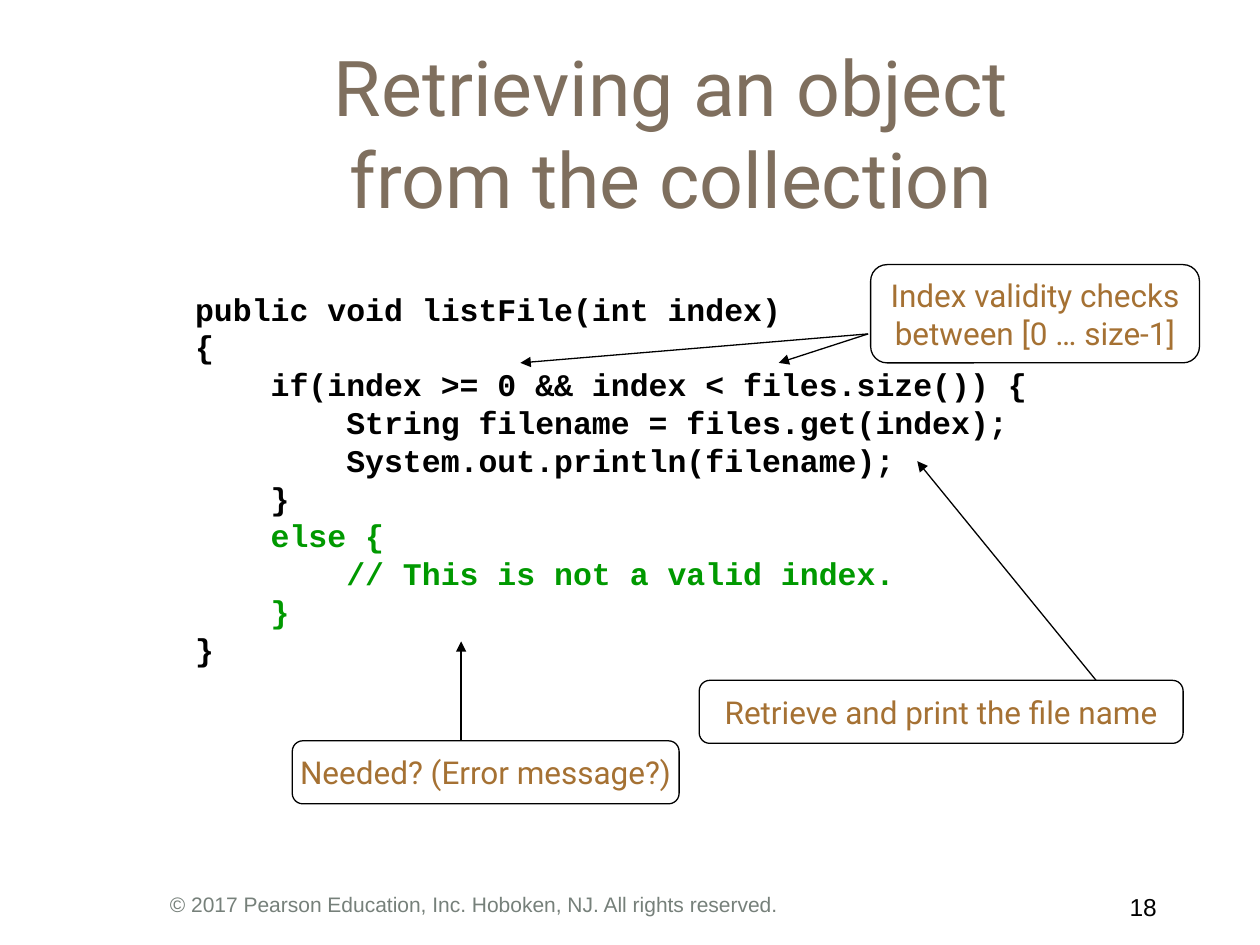
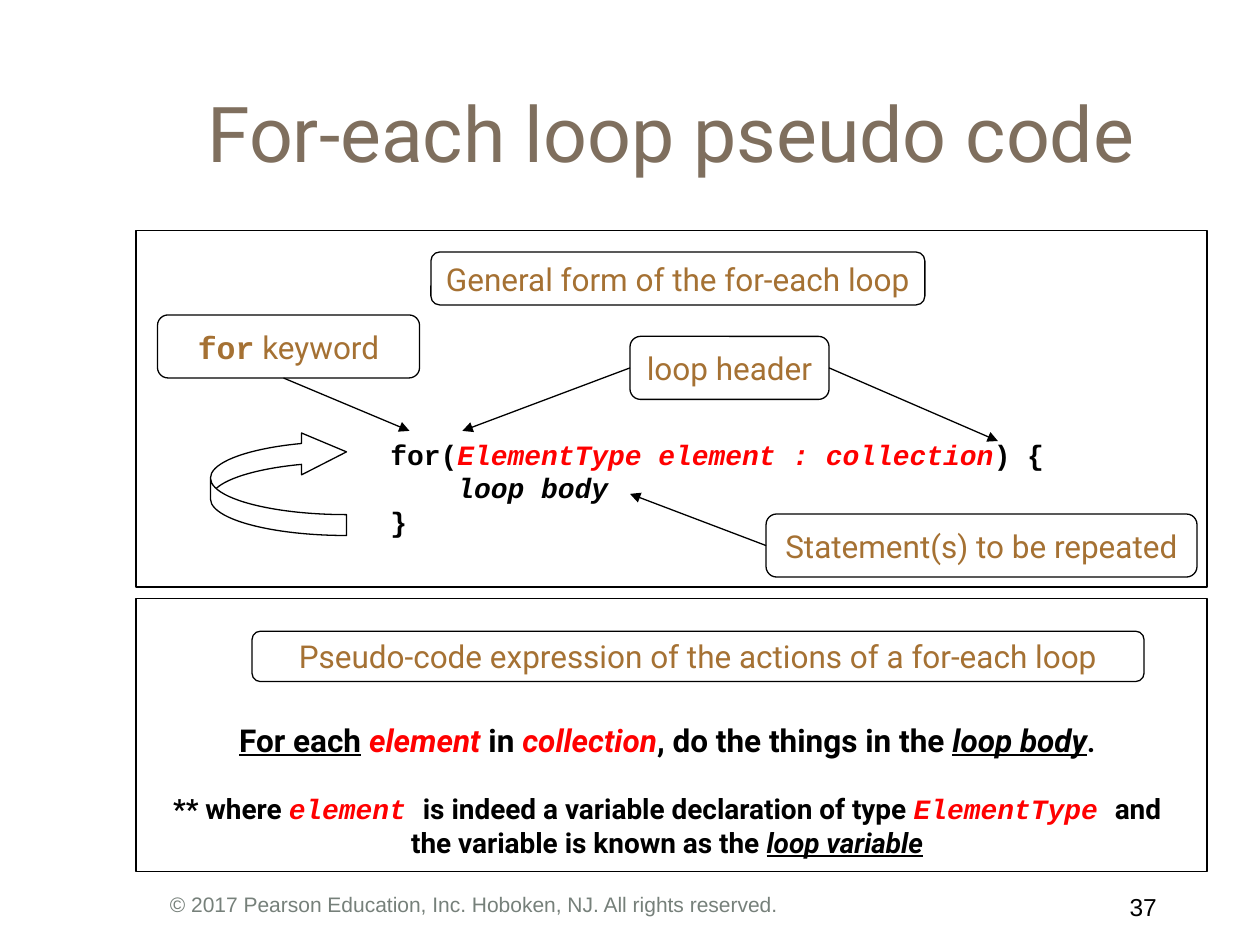
from dataclasses import dataclass

from lxml import etree
from pptx import Presentation
from pptx import util as u
from pptx.dml import color
from pptx.enum import shapes, text
from pptx.oxml import ns


@dataclass(frozen=True)
class Theme:
    title: str = "7F6F5E"
    callout: str = "A57133"
    footer: str = "76807A"
    ink: str = "000000"
    red: str = "FF0000"
    green: str = "009900"
    sans: str = "Roboto"
    mono: str = "Courier New"
    small: str = "Arial"
    title_size: int = 44
    text_size: int = 18
    note_size: int = 16
    number_size: int = 14
    footer_size: int = 12
    line_width: float = 0.75
    code_leading: float = 1.2


THEME = Theme()
ALIGN = text.PP_ALIGN

BASE = {
    "title": dict(name=THEME.sans, size=THEME.title_size, rgb=THEME.title),
    "callout": dict(name=THEME.sans, size=THEME.text_size, rgb=THEME.callout),
    "code": dict(name=THEME.mono, size=THEME.text_size, rgb=THEME.ink, bold=True),
    "small code": dict(name=THEME.mono, size=THEME.note_size, rgb=THEME.ink, bold=True),
    "summary": dict(name=THEME.sans, size=THEME.text_size, rgb=THEME.ink, bold=True),
    "note": dict(name=THEME.sans, size=THEME.note_size, rgb=THEME.ink, bold=True),
    "footer": dict(name=THEME.small, size=THEME.footer_size, rgb=THEME.footer),
    "number": dict(name=THEME.small, size=THEME.number_size, rgb=THEME.ink),
}
ACCENT = {
    "green": dict(rgb=THEME.green),
    "variable": dict(rgb=THEME.red, italic=True),
    "code variable": dict(name=THEME.mono, rgb=THEME.red, italic=True),
    "keyword": dict(name=THEME.mono, bold=True),
    "italic": dict(italic=True),
    "underline": dict(underline=True),
    "term": dict(italic=True, underline=True),
    "period": dict(size=THEME.note_size),
}

FOOTER = "© 2017 Pearson Education, Inc. Hoboken, NJ. All rights reserved."

RETRIEVE = {
    "title": "Retrieving an object\vfrom the collection",
    "number": "18",
    "panels": [],
    "texts": [
        ((1.45, 2.25, 6.84, 3.13), False, ALIGN.LEFT, [
            ("code", "public void listFile(int index)"),
            ("code", "{"),
            ("code", "    if(index >= 0 && index < files.size()) {"),
            ("code", "        String filename = files.get(index);"),
            ("code", "        System.out.println(filename);"),
            ("code", "    }"),
            ("code", [("    else {", "green")]),
            ("code", [("        // This is not a valid index.", "green")]),
            ("code", [("    }", "green")]),
            ("code", "}"),
        ]),
    ],
    "callouts": [
        ((5.55, 5.4, 3.84, 0.5), ["Retrieve and print the file name"]),
        ((2.32, 5.88, 3.07, 0.5), ["Needed? (Error message?)"]),
        ((6.91, 2.1, 2.61, 0.78), ["Index validity checks", "between [0 … size-1]"]),
    ],
    "arrows": [
        ((6.89, 2.65), (4.13, 2.88)),
        ((6.89, 2.65), (6.18, 2.88)),
        ((8.7, 5.4), (7.28, 3.66)),
        ((3.66, 5.88), (3.66, 5.09)),
    ],
}

FOR_EACH = {
    "title": "For-each loop pseudo code",
    "number": "37",
    "panels": [(1.08, 1.83, 8.5, 2.83), (1.08, 4.75, 8.5, 2.17)],
    "loop_arrow": (1.67, 3.42, 1.08, 0.83),
    "texts": [
        ((3, 3.42, 5.42, 0.9), True, ALIGN.LEFT, [
            ("small code", [("for(", None),
                            ("ElementType element : collection", "variable"),
                            (") {", None)]),
            ("small code", [("    ", None), ("loop body", "italic")]),
            ("small code", "}"),
        ]),
        ((1.17, 5.67, 8.25, 1.2), True, ALIGN.CENTER, [
            ("summary", [("For each", "underline"), (" ", None),
                         ("element", "variable"), (" in ", None),
                         ("collection", "variable"),
                         (", do the things in the ", None),
                         ("loop body", "term"), (".", "period")]),
            ("note", [("** where ", None), ("element ", "code variable"),
                      ("is indeed a variable declaration of type ", None),
                      ("ElementType ", "code variable"),
                      ("and the variable is known as the ", None),
                      ("loop variable", "term")]),
        ]),
    ],
    "callouts": [
        ((5, 2.67, 1.58, 0.5), ["loop header"]),
        ((1.25, 2.5, 2.08, 0.5), [[("for", "keyword"), (" keyword", None)]]),
        ((3.42, 2, 3.92, 0.42), ["General form of the for-each loop"]),
        ((6.08, 4.08, 3.42, 0.5), ["Statement(s) to be repeated"]),
        ((2, 5.01, 7.08, 0.4),
         ["Pseudo-code expression of the actions of a for-each loop"]),
    ],
    "arrows": [
        ((5, 2.92), (3.67, 3.42)),
        ((2.25, 3), (3.25, 3.42)),
        ((6.08, 4.33), (5, 3.92)),
        ((6.58, 2.92), (7.92, 3.5)),
    ],
}


def inches(values):
    return [u.Inches(value) for value in values]


def style_font(font, rgb=None, size=None, **settings):
    for name, value in settings.items():
        setattr(font, name, value)
    if size:
        font.size = u.Pt(size)
    if rgb:
        font.color.rgb = color.RGBColor.from_string(rgb)


def fill_text(frame, paragraphs, align, wrap=True):
    frame.word_wrap = wrap
    for index, (base, content) in enumerate(paragraphs):
        paragraph = frame.add_paragraph() if index else frame.paragraphs[0]
        paragraph.alignment = align
        if base.endswith("code"):
            paragraph.line_spacing = u.Pt(BASE[base]["size"] * THEME.code_leading)
        if base == "note":
            paragraph.space_before = u.Pt(19)
        style_font(paragraph.font, **BASE[base])
        if isinstance(content, str):
            paragraph.text = content
            continue
        for words, accent in content:
            run = paragraph.add_run()
            run.text = words
            if accent:
                style_font(run.font, **ACCENT[accent])


def add_text(slide, box, paragraphs, align=ALIGN.LEFT, wrap=True):
    shape = slide.shapes.add_textbox(*inches(box))
    fill_text(shape.text_frame, paragraphs, align, wrap)


def set_line(line):
    line.color.rgb = color.RGBColor.from_string(THEME.ink)
    line.width = u.Pt(THEME.line_width)


def add_outline(slide, preset, box):
    shape = slide.shapes.add_shape(preset, *inches(box))
    shape.shadow.inherit = False
    shape.fill.background()
    set_line(shape.line)
    return shape


def add_callout(slide, box, lines):
    shape = add_outline(slide, shapes.MSO_SHAPE.ROUNDED_RECTANGLE, box)
    shape.text_frame.vertical_anchor = text.MSO_ANCHOR.MIDDLE
    fill_text(shape.text_frame, [("callout", line) for line in lines],
              ALIGN.CENTER, wrap=False)


def add_arrow(slide, start, end):
    connector = slide.shapes.add_connector(
        shapes.MSO_CONNECTOR.STRAIGHT, *inches(start + end))
    set_line(connector.line)
    etree.SubElement(connector.line._get_or_add_ln(), ns.qn("a:tailEnd"),
                     type="triangle")
    etree.SubElement(connector._element.spPr, ns.qn("a:effectLst"))


def add_loop_arrow(slide, box):
    shape = add_outline(slide, shapes.MSO_SHAPE.CURVED_LEFT_ARROW, box)
    shape.rotation = 180
    for index, value in enumerate((0.2, 0.4, 0.433)):
        shape.adjustments[index] = round(value, 2)


def add_title(slide, words):
    title = slide.shapes.title
    title.left, title.top, title.width, title.height = inches((1.08, 0.42, 8.5, 1.25))
    title.text_frame.auto_size = text.MSO_AUTO_SIZE.NONE
    title.text_frame.vertical_anchor = text.MSO_ANCHOR.MIDDLE
    fill_text(title.text_frame, [("title", words)], ALIGN.CENTER)


def build_slide(presentation, content):
    slide = presentation.slides.add_slide(presentation.slide_layouts[5])
    add_title(slide, content["title"])
    add_text(slide, (1.25, 7.03, 7.58, 0.33), [("footer", FOOTER)])
    add_text(slide, (8.75, 7.03, 0.53, 0.33), [("number", content["number"])],
             ALIGN.RIGHT)
    for box in content["panels"]:
        add_outline(slide, shapes.MSO_SHAPE.RECTANGLE, box)
    if "loop_arrow" in content:
        add_loop_arrow(slide, content["loop_arrow"])
    for box, wrap, align, paragraphs in content["texts"]:
        add_text(slide, box, paragraphs, align, wrap)
    for box, lines in content["callouts"]:
        add_callout(slide, box, lines)
    for start, end in content["arrows"]:
        add_arrow(slide, start, end)


def main():
    presentation = Presentation()
    presentation.slide_width, presentation.slide_height = inches((10, 7.5))
    for content in (RETRIEVE, FOR_EACH):
        build_slide(presentation, content)
    presentation.save("out.pptx")


if __name__ == "__main__":
    main()
